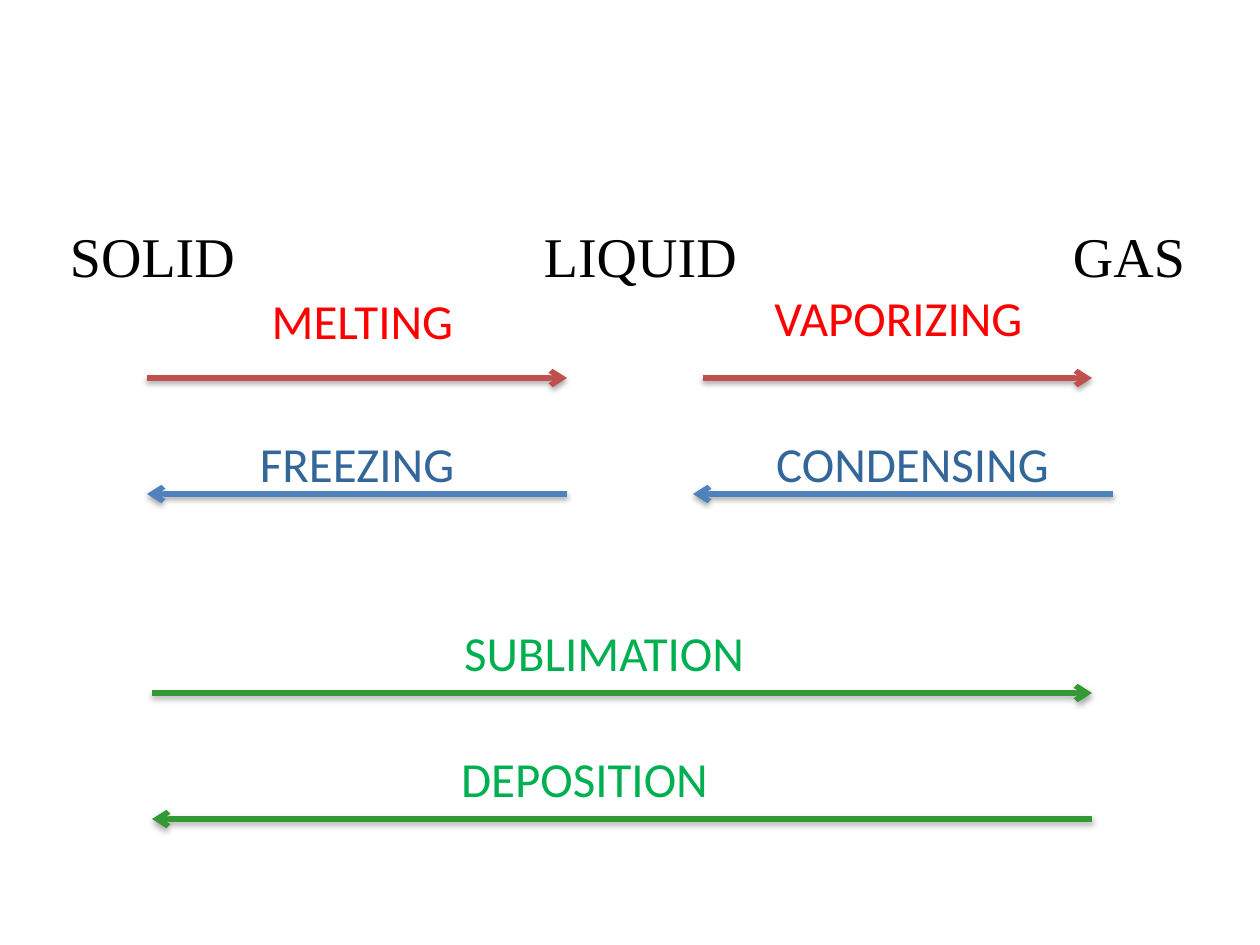
from lxml import etree
from pptx import Presentation
from pptx import util as u
from pptx.dml.color import RGBColor
from pptx.enum import shapes, text
from pptx.oxml.ns import qn

PX = 914400 / 126
COLORS = {
    "state": "000000",
    "heat": "FF0000", "heat_arrow": "C0504D",
    "cool": "336699", "cool_arrow": "4F81BD",
    "direct": "00B050", "direct_arrow": "339933",
    "shadow": "000000",
}


def px(*lengths):
    return [u.Emu(round(length * PX)) for length in lengths]


def color(key):
    return RGBColor.from_string(COLORS[key])


def add_xml(parent, tag, **attributes):
    return etree.SubElement(parent, qn(tag), attributes)


class PhaseSlide:
    label_font, label_size = "Calibri", 28
    state_font, state_size = "Times New Roman", 32

    def __init__(self, slide):
        self.slide = slide

    def _box(self, wording, at, font, size, key):
        frame = self.slide.shapes.add_textbox(*px(*at)).text_frame
        frame.word_wrap = True
        paragraph = frame.paragraphs[0]
        paragraph.text = wording
        return frame, paragraph, (font, size, key)

    def _style(self, paragraph, font, size, key):
        paragraph.font.name = font
        paragraph.font.size = u.Pt(size)
        paragraph.font.color.rgb = color(key)

    def states(self, names, at, starts):
        """One line of state names, each starting at its own tab stop."""
        frame, paragraph, style = self._box(
            "\t".join(names), at, self.state_font, self.state_size, "state")
        frame.vertical_anchor = text.MSO_ANCHOR.BOTTOM
        frame.margin_left, frame.margin_right = px(starts[0] - at[0], 0)
        tabs = add_xml(paragraph._p.get_or_add_pPr(), "a:tabLst")
        for start in starts[1:]:
            add_xml(tabs, "a:tab", pos=str(px(start - starts[0])[0]), algn="l")
        self._style(paragraph, *style)

    def label(self, wording, at, key):
        _, paragraph, style = self._box(
            wording, at, self.label_font, self.label_size, key)
        paragraph.alignment = text.PP_ALIGN.CENTER
        self._style(paragraph, *style)

    def arrow(self, start, end, y, key):
        connector = self.slide.shapes.add_connector(
            shapes.MSO_CONNECTOR.STRAIGHT, *px(start, y, end, y))
        connector.line.color.rgb = color(key)
        connector.line.width = u.Pt(3)
        add_xml(connector.line._get_or_add_ln(), "a:tailEnd", type="arrow")
        effects = add_xml(connector._element.spPr, "a:effectLst")
        shadow = add_xml(effects, "a:outerShdw", blurRad=str(u.Pt(3.1)),
                         dist=str(u.Pt(1.8)), dir="5400000", rotWithShape="0")
        tint = add_xml(shadow, "a:srgbClr", val=COLORS["shadow"])
        add_xml(tint, "a:alpha", val="35000")


def main():
    deck = Presentation()
    deck.slide_width, deck.slide_height = px(1260, 945)
    phases = PhaseSlide(deck.slides.add_slide(deck.slide_layouts[6]))

    # States of matter
    phases.states(["SOLID", "LIQUID", "GAS"], (0, 10, 1260, 285), (70, 544, 1073))

    # Phase changes: name, label left, top and width, arrow start, end and y, kind
    changes = [
        ("MELTING", 210, 284, 305, 147, 567, 378, "heat"),
        ("VAPORIZING", 746, 281, 305, 703, 1092, 378, "heat"),
        ("FREEZING", 247, 427, 220, 567, 147, 494, "cool"),
        ("CONDENSING", 750, 427, 325, 1113, 693, 494, "cool"),
        ("SUBLIMATION", 310, 616, 588, 152, 1092, 693, "direct"),
        ("DEPOSITION", 325, 742, 519, 1092, 152, 819, "direct"),
    ]
    for name, left, top, width, start, end, y, kind in changes:
        phases.arrow(start, end, y, kind + "_arrow")
        phases.label(name, (left, top, width, 72), kind)

    deck.save("out.pptx")


if __name__ == "__main__":
    main()
